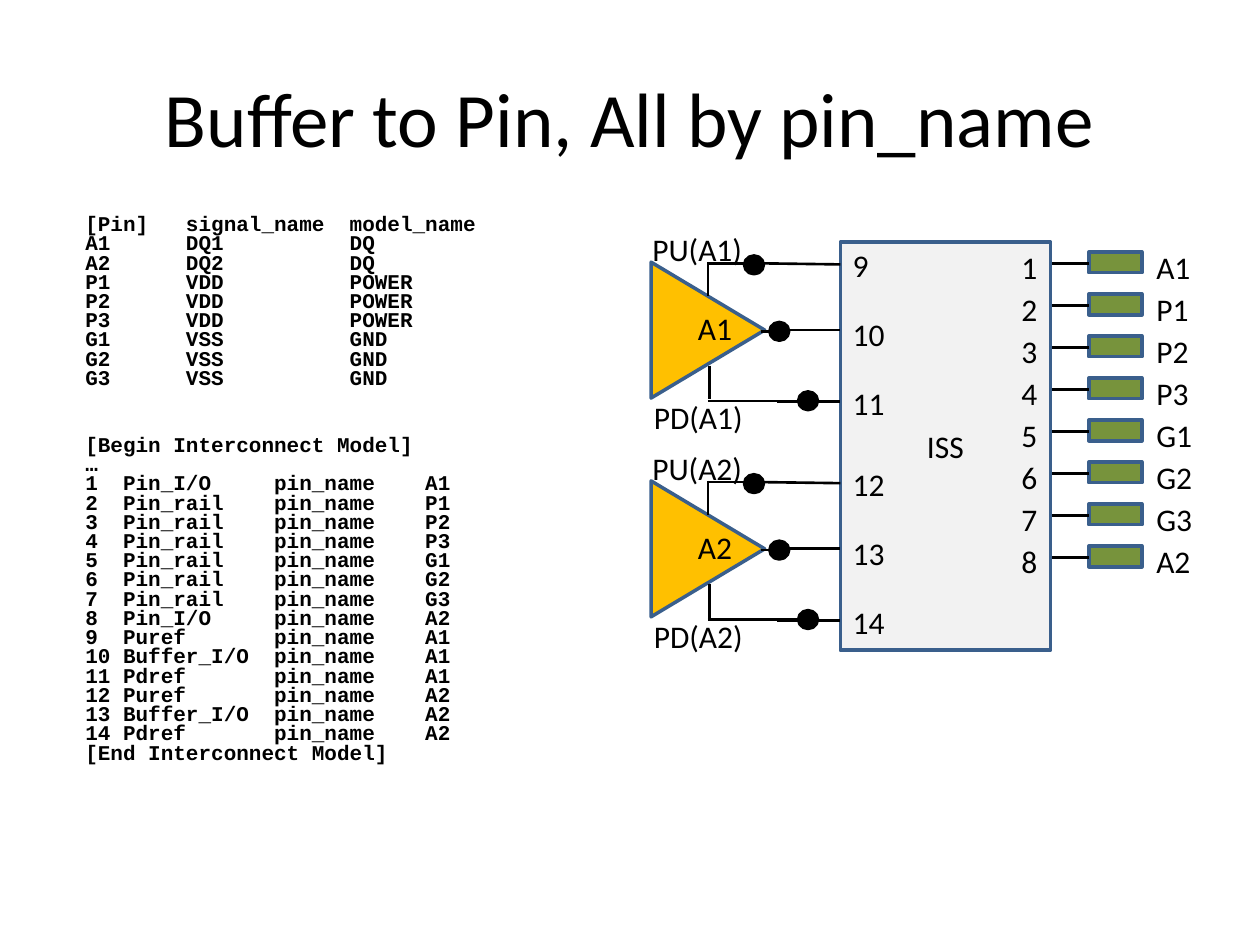
from dataclasses import dataclass

from lxml import etree
from pptx import Presentation
from pptx import util as u
from pptx.dml.color import RGBColor
from pptx.enum import shapes, text
from pptx.oxml.ns import qn

COLORS = {
    "ink": "000000",
    "outline": "3A5F8C",
    "pad": "77933C",
    "chip": "F2F2F2",
    "buffer": "FFC000",
}
SANS, MONO = "Calibri", "Courier New"
PAD_PITCH = 2.54 / 3
CHIP_LEFT = 16.94

PIN_TABLE = [
    ("[Pin]", "signal_name", "model_name"),
    ("A1", "DQ1", "DQ"),
    ("A2", "DQ2", "DQ"),
    *((f"P{n}", "VDD", "POWER") for n in (1, 2, 3)),
    *((f"G{n}", "VSS", "GND") for n in (1, 2, 3)),
]
PADS = ["A1", "P1", "P2", "P3", "G1", "G2", "G3", "A2"]


@dataclass
class Box:
    """A frame in centimetres."""
    left: float
    top: float
    width: float
    height: float

    def emu(self):
        return [u.Cm(v) for v in (self.left, self.top, self.width, self.height)]


@dataclass
class Style:
    size: float = 18
    font: str = SANS
    bold: bool = False
    align: text.PP_ALIGN = text.PP_ALIGN.LEFT
    after: float = 0
    leading: float | None = None


@dataclass
class Buffer:
    name: str
    first_terminal: int
    dy: float


BUFFERS = [Buffer("A1", 9, 0), Buffer("A2", 12, 4.41)]
LABEL = Style()
CODE = Style(12, MONO, bold=True, leading=11)
CENTRED = Style(align=text.PP_ALIGN.CENTER)


def rgb(name: str) -> RGBColor:
    return RGBColor.from_string(COLORS[name])


def write(tf, lines: list[str], style: Style) -> None:
    for i, line in enumerate(lines):
        p = tf.paragraphs[0] if i == 0 else tf.add_paragraph()
        p.alignment = style.align
        p.space_after = u.Pt(style.after)
        if style.leading:
            p.line_spacing = u.Pt(style.leading)
        r = p.add_run()
        r.text = line
        r.font.size = u.Pt(style.size)
        r.font.name = style.font
        r.font.bold = style.bold
        r.font.color.rgb = rgb("ink")


def add_text(slide, box: Box, lines: list[str], style: Style = LABEL,
             wrap: bool = True) -> None:
    tf = slide.shapes.add_textbox(*box.emu()).text_frame
    tf.word_wrap = wrap
    tf.auto_size = text.MSO_AUTO_SIZE.SHAPE_TO_FIT_TEXT
    write(tf, lines, style)


def add_shape(slide, kind: shapes.MSO_SHAPE, box: Box, fill: str,
              line: str = "outline"):
    sp = slide.shapes.add_shape(kind, *box.emu())
    sp.shadow.inherit = False
    sp.fill.solid()
    sp.fill.fore_color.rgb = rgb(fill)
    sp.line.color.rgb = rgb(line)
    sp.line.width = u.Pt(2)
    return sp


def add_wire(slide, x1: float, y1: float, x2: float, y2: float) -> None:
    wire = slide.shapes.add_connector(
        shapes.MSO_CONNECTOR.STRAIGHT, u.Cm(x1), u.Cm(y1), u.Cm(x2), u.Cm(y2))
    wire.line.color.rgb = rgb("ink")
    wire.line.width = u.Pt(1.5)
    etree.SubElement(wire._element.spPr, qn("a:effectLst"))


def add_title(slide) -> None:
    title = slide.shapes.title
    title.left, title.top, title.width, title.height = Box(1.27, 0.76, 22.86, 3.18).emu()
    title.text_frame.vertical_anchor = text.MSO_ANCHOR.MIDDLE
    write(title.text_frame, ["Buffer to Pin, All by pin_name"],
          Style(44, align=text.PP_ALIGN.CENTER))


def add_chip(slide) -> None:
    """Draw the ISS block with its pads, pad names and pin numbers."""
    for i in range(len(PADS)):
        dy = i * PAD_PITCH
        add_shape(slide, shapes.MSO_SHAPE.RECTANGLE,
                  Box(21.95, 5.08 + dy, 1.07, 0.42), "pad")
        add_wire(slide, 21.03, 5.31 + dy, 21.95, 5.31 + dy)
    add_text(slide, Box(23.06, 4.88, 1.27, 6.91), PADS, Style(after=2.4))

    chip = add_shape(slide, shapes.MSO_SHAPE.RECTANGLE,
                     Box(CHIP_LEFT, 4.88, 4.24, 8.23), "chip")
    chip.text_frame.vertical_anchor = text.MSO_ANCHOR.MIDDLE
    write(chip.text_frame, ["ISS"], CENTRED)
    numbers = [str(n) for n in range(1, len(PADS) + 1)]
    add_text(slide, Box(19.89, 4.88, 1.27, 6.91), numbers,
             Style(align=text.PP_ALIGN.RIGHT, after=2.4))


def add_buffer(slide, buffer: Buffer) -> None:
    """Draw a buffer, its three wires to the chip and their terminal numbers."""
    dy = buffer.dy
    triangle = add_shape(slide, shapes.MSO_SHAPE.ISOSCELES_TRIANGLE,
                         Box(12.9, 5.51 + dy, 2.74, 2.29), "buffer")
    triangle.rotation = 90
    for x1, y1, x2, y2 in [
        (15.39, 5.31, CHIP_LEFT, 5.33),  # pull-up
        (14.27, 5.31, 14.99, 5.31),
        (14.27, 5.28, 14.27, 5.97),
        (15.9, 6.65, CHIP_LEFT, 6.65),   # output
        (15.34, 6.68, 15.67, 6.68),
        (15.67, 8.1, CHIP_LEFT, 8.1),    # pull-down
        (14.27, 8.08, 16.1, 8.08),
        (14.3, 7.37, 14.3, 8.05),
    ]:
        add_wire(slide, x1, y1 + dy, x2, y2 + dy)
    for x, y in [(15.01, 5.16), (15.52, 6.5), (16.1, 7.9)]:
        add_shape(slide, shapes.MSO_SHAPE.OVAL,
                  Box(x, y + dy, 0.38, 0.36), "ink", "ink")
    for label, x, y, width in [
        (f"PU({buffer.name})", 12.9, 4.52, 2.34),
        (f"PD({buffer.name})", 12.93, 7.9, 2.34),
        (buffer.name, 13.82, 6.1, 1.22),
    ]:
        add_text(slide, Box(x, y + dy, width, 1.02), [label], wrap=False)
    terminals = [str(buffer.first_terminal + i) for i in range(3)]
    add_text(slide, Box(CHIP_LEFT, 4.83 + dy, 1.17, 3.84), terminals,
             Style(after=18), wrap=False)


def interconnect_lines() -> list[str]:
    terminals = [("Pin_I/O" if pad.startswith("A") else "Pin_rail", pad) for pad in PADS]
    terminals += [(kind, b.name) for b in BUFFERS
                  for kind in ("Puref", "Buffer_I/O", "Pdref")]
    rows = [f"{n:<3}{kind:<12}{'pin_name':<12}{pin}"
            for n, (kind, pin) in enumerate(terminals, 1)]
    return ["[Begin Interconnect Model]", "…", *rows, "[End Interconnect Model]"]


def main() -> None:
    prs = Presentation()
    prs.slide_width, prs.slide_height = u.Cm(25.4), u.Cm(19.05)
    slide = prs.slides.add_slide(prs.slide_layouts.get_by_name("Title Only"))
    add_title(slide)
    add_chip(slide)
    pin_lines = [f"{pin:<8}{signal:<13}{model}" for pin, signal, model in PIN_TABLE]
    add_text(slide, Box(1.47, 4.24, 10.36, 3.78), pin_lines, CODE)
    add_text(slide, Box(1.47, 8.69, 10.36, 6.91), interconnect_lines(), CODE)
    for buffer in BUFFERS:
        add_buffer(slide, buffer)
    prs.save("out.pptx")


if __name__ == "__main__":
    main()
